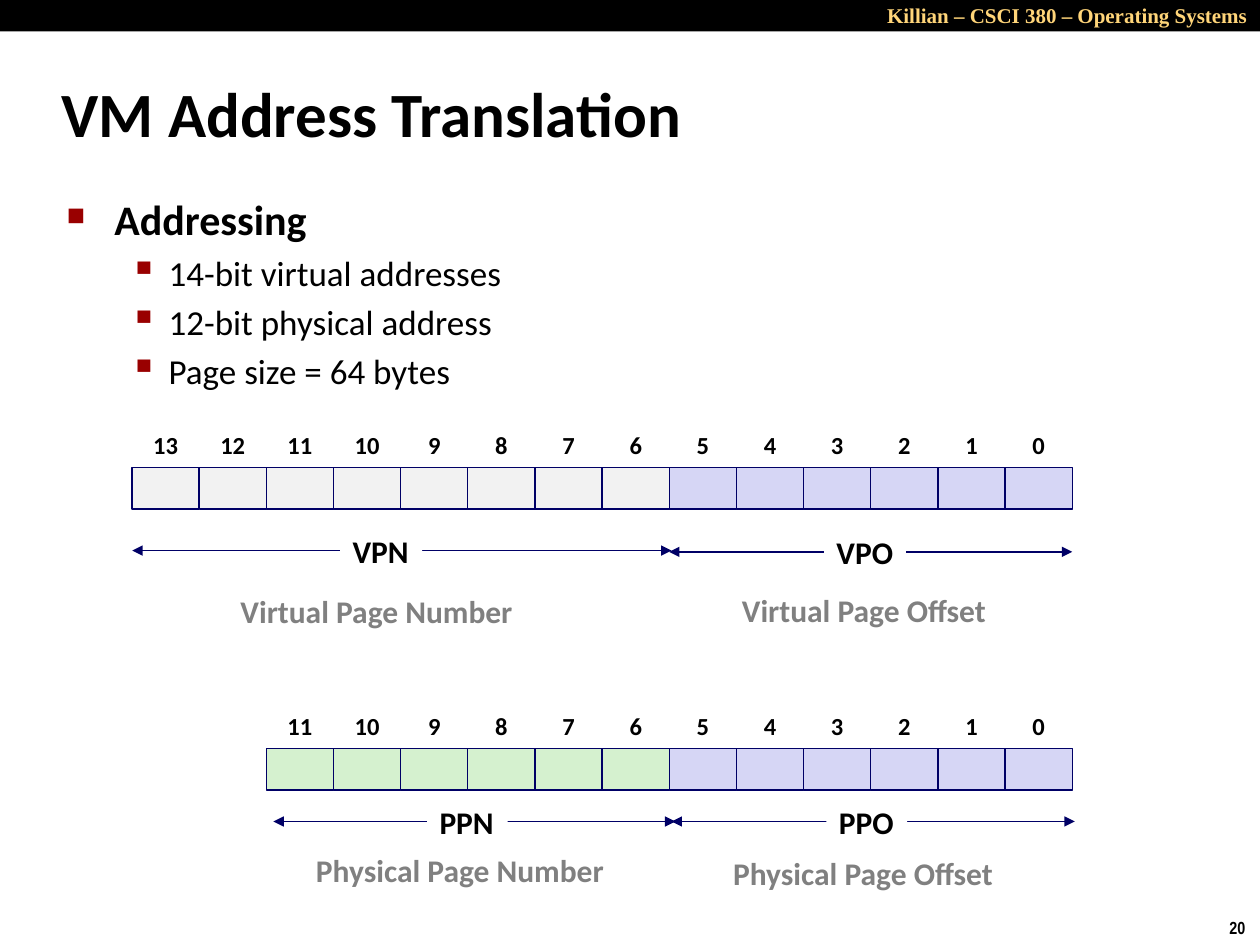
"""Build the VM address translation slide with its virtual and physical address layouts."""
from dataclasses import dataclass, field
from typing import Any

from lxml import etree
from pptx import Presentation
from pptx.dml.color import RGBColor
from pptx.enum.shapes import MSO_CONNECTOR, MSO_SHAPE
from pptx.enum.text import MSO_ANCHOR, MSO_AUTO_SIZE, PP_ALIGN
from pptx.oxml.ns import qn
from pptx.util import Inches, Pt

RECTANGLE = MSO_SHAPE.RECTANGLE
STRAIGHT = MSO_CONNECTOR.STRAIGHT
MIDDLE = MSO_ANCHOR.MIDDLE
TOP = MSO_ANCHOR.TOP
GROW = MSO_AUTO_SIZE.SHAPE_TO_FIT_TEXT
FIXED = MSO_AUTO_SIZE.NONE
LEFT, CENTER, RIGHT = PP_ALIGN.LEFT, PP_ALIGN.CENTER, PP_ALIGN.RIGHT

BLACK = RGBColor(0x00, 0x00, 0x00)
WHITE = RGBColor(0xFF, 0xFF, 0xFF)
GOLD = RGBColor(0xFF, 0xD5, 0x79)
NAVY = RGBColor(0x00, 0x00, 0x66)
GRAY = RGBColor(0x80, 0x80, 0x80)
PALE_GRAY = RGBColor(0xF2, 0xF2, 0xF2)
PALE_BLUE = RGBColor(0xD6, 0xD6, 0xF5)
PALE_GREEN = RGBColor(0xD5, 0xF1, 0xCF)
BULLET_RED = "990000"

LAST_EDGE = 8.51
CELL_WIDTH = 0.533
CELL_HEIGHT = 0.33
OFFSET_BITS = 6


@dataclass(frozen=True)
class TextStyle:
    """Font, paragraph and frame settings of a text."""
    size: float
    color: RGBColor = BLACK
    name: str = "Calibri"
    bold: bool = True
    paragraph: dict[str, Any] = field(default_factory=dict)
    frame: dict[str, Any] = field(default_factory=dict)


@dataclass(frozen=True)
class Address:
    """Row of numbered bits whose low bits are the page offset."""
    bits: int
    top: float
    number_fill: RGBColor


@dataclass(frozen=True)
class Span:
    """Double arrow over a bit range, with its short name and caption."""
    name: str
    left: float
    right: float
    middle: float
    name_left: float
    name_width: float
    caption: str
    caption_left: float
    caption_top: float
    caption_width: float


@dataclass(frozen=True)
class Bullet:
    """Bullet line with its glyph and indents."""
    text: str
    style: TextStyle
    glyph: str
    percent: int
    margin: float
    hanging: float
    level: int = 0


LABEL_FRAME = {"word_wrap": False, "auto_size": GROW, "vertical_anchor": TOP}
LABEL_PARAGRAPH = {"alignment": LEFT, "line_spacing": 0.88, "space_before": Pt(6.8)}
BIT = TextStyle(
    14,
    paragraph={"alignment": CENTER, "line_spacing": 0.88, "space_before": Pt(5.2)},
    frame={"word_wrap": False, "vertical_anchor": MIDDLE},
)
NAME = TextStyle(18, paragraph=LABEL_PARAGRAPH, frame=LABEL_FRAME)
CAPTION = TextStyle(18, GRAY, paragraph=LABEL_PARAGRAPH, frame=LABEL_FRAME)
TITLE = TextStyle(
    36,
    paragraph={"alignment": LEFT},
    frame={"word_wrap": True, "auto_size": FIXED, "vertical_anchor": MIDDLE},
)
COURSE = TextStyle(
    12, GOLD, "Times New Roman",
    paragraph={"alignment": RIGHT}, frame={"word_wrap": True, "auto_size": GROW},
)
PAGE_NUMBER = TextStyle(10, BLACK, "Arial Narrow", frame=LABEL_FRAME)
TOPIC = TextStyle(24, paragraph={"space_before": Pt(4.8)})
DETAIL = TextStyle(20, bold=False, paragraph={"space_before": Pt(4)})

BULLETS = [Bullet("Addressing", TOPIC, "■", 60, 0.38, 0.38)] + [
    Bullet(text, DETAIL, "▪", 110, 0.81, 0.31, 1)
    for text in ("14-bit virtual addresses", "12-bit physical address", "Page size = 64 bytes")
]
ADDRESSES = [Address(14, 3.71, PALE_GRAY), Address(12, 5.94, PALE_GREEN)]
SPANS = [
    Span("VPO", 5.31, 8.51, 4.38, 6.54, 0.65, "Virtual Page Offset", 5.79, 4.68, 2.16),
    Span("PPO", 5.33, 8.53, 6.52, 6.56, 0.64, "Physical Page Offset", 5.72, 6.77, 2.29),
    Span("PPN", 2.17, 5.36, 6.52, 3.39, 0.64, "Physical Page Number", 2.41, 6.74, 2.5),
    Span("VPN", 1.05, 5.33, 4.37, 2.7, 0.65, "Virtual Page Number", 1.81, 4.69, 2.38),
]


def set_values(target: Any, values: dict[str, Any]) -> None:
    for key, value in values.items():
        setattr(target, key, value)


def write(paragraph: Any, text: str, style: TextStyle) -> None:
    run = paragraph.add_run()
    run.text = text
    set_values(run.font, {"size": Pt(style.size), "name": style.name, "bold": style.bold})
    run.font.color.rgb = style.color
    set_values(paragraph, style.paragraph)


def fill_text(box: Any, text: str, style: TextStyle) -> None:
    set_values(box.text_frame, style.frame)
    write(box.text_frame.paragraphs[0], text, style)


def add_text(shapes: Any, place: tuple[float, ...], text: str, style: TextStyle) -> None:
    fill_text(shapes.add_textbox(*map(Inches, place)), text, style)


def add_rectangle(
    shapes: Any, place: tuple[float, ...], fill: RGBColor, line: RGBColor | None = None
) -> Any:
    box = shapes.add_shape(RECTANGLE, *map(Inches, place))
    box.shadow.inherit = False
    box.fill.solid()
    box.fill.fore_color.rgb = fill
    if line is None:
        box.line.fill.background()
    else:
        box.line.color.rgb = line
        box.line.width = Pt(0.75)
    return box


def add_address(shapes: Any, address: Address) -> None:
    for bit in reversed(range(address.bits)):
        left = LAST_EDGE - (bit + 1) * CELL_WIDTH
        fill = PALE_BLUE if bit < OFFSET_BITS else address.number_fill
        add_rectangle(shapes, (left, address.top, CELL_WIDTH, CELL_HEIGHT), fill, NAVY)
        number_place = (left, address.top - CELL_HEIGHT, CELL_WIDTH, CELL_HEIGHT)
        add_text(shapes, number_place, str(bit), BIT)


def add_span(shapes: Any, span: Span) -> None:
    group = shapes.add_group_shape()
    ends = (span.left, span.middle, span.right, span.middle)
    arrow = group.shapes.add_connector(STRAIGHT, *map(Inches, ends))
    arrow.line.color.rgb = NAVY
    arrow.line.width = Pt(0.75)
    for tag in ("a:headEnd", "a:tailEnd"):
        etree.SubElement(arrow.line._get_or_add_ln(), qn(tag), type="triangle")
    etree.SubElement(arrow._element.spPr, qn("a:effectLst"))
    name_place = (span.name_left, span.middle - 0.16, span.name_width, 0.36)
    fill_text(add_rectangle(group.shapes, name_place, WHITE), span.name, NAME)
    caption_place = (span.caption_left, span.caption_top, span.caption_width, 0.36)
    add_text(shapes, caption_place, span.caption, CAPTION)


def add_bullets(shapes: Any, place: tuple[float, ...], bullets: list[Bullet]) -> None:
    frame = shapes.add_textbox(*map(Inches, place)).text_frame
    frame.word_wrap = True
    for index, bullet in enumerate(bullets):
        paragraph = frame.add_paragraph() if index else frame.paragraphs[0]
        paragraph.level = bullet.level
        write(paragraph, bullet.text, bullet.style)
        properties = paragraph._p.get_or_add_pPr()
        properties.set("marL", str(Inches(bullet.margin)))
        properties.set("indent", str(-Inches(bullet.hanging)))
        color = etree.SubElement(properties, qn("a:buClr"))
        etree.SubElement(color, qn("a:srgbClr"), val=BULLET_RED)
        etree.SubElement(properties, qn("a:buSzPct"), val=str(bullet.percent * 1000))
        etree.SubElement(properties, qn("a:buChar"), char=bullet.glyph)


def main() -> None:
    deck = Presentation()
    set_values(deck, {"slide_width": Inches(10), "slide_height": Inches(7.5)})
    page = deck.slides.add_slide(deck.slide_layouts[5])
    shapes = page.shapes
    add_rectangle(shapes, (0, 0, 10, 0.25), BLACK)
    add_text(shapes, (6.58, -0.03, 3.42, 0.3), "Killian – CSCI 380 – Operating Systems", COURSE)
    add_text(shapes, (9.66, 7.23, 0.34, 0.27), "20", PAGE_NUMBER)
    title_place = {"left": 0.39, "top": 0.48, "width": 8.3, "height": 0.83}
    set_values(shapes.title, {key: Inches(value) for key, value in title_place.items()})
    fill_text(shapes.title, "VM Address Translation", TITLE)
    add_bullets(shapes, (0.43, 1.49, 8.64, 5.44), BULLETS)
    for address in ADDRESSES:
        add_address(shapes, address)
    for span in SPANS:
        add_span(shapes, span)
    deck.save("out.pptx")


if __name__ == "__main__":
    main()
